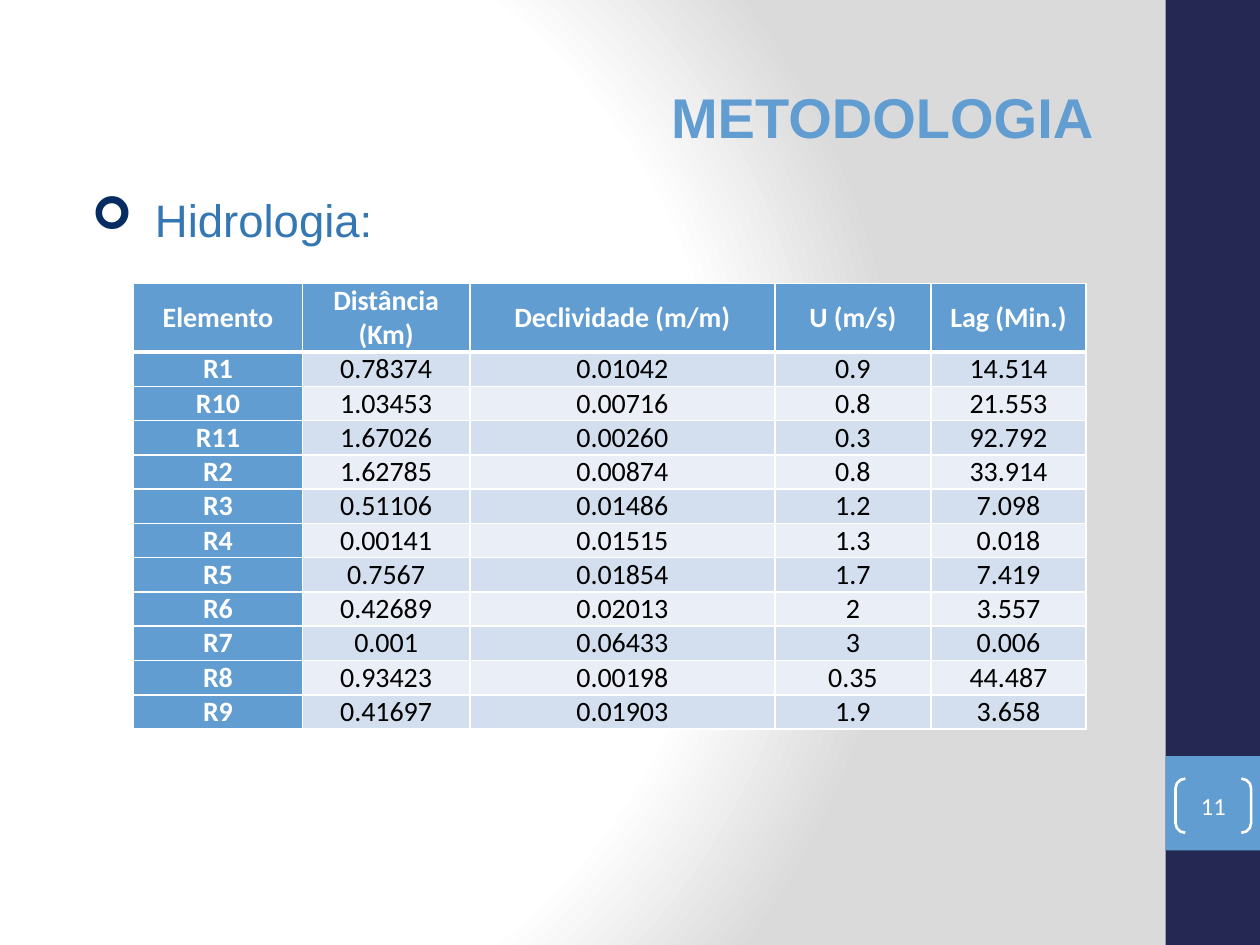
import pptx
import pptx.dml.color
import pptx.enum.shapes
import pptx.enum.text
import pptx.oxml
import pptx.oxml.ns
import pptx.util
from lxml import etree
from pptx.util import Inches

NAVY, BLUE, WHITE = "242852", "629DD1", "FFFFFF"
ALIGN = pptx.enum.text.PP_ALIGN
MIDDLE = pptx.enum.text.MSO_ANCHOR.MIDDLE
SHAPES = pptx.enum.shapes.MSO_SHAPE
qn = pptx.oxml.ns.qn


def color(value):
    return pptx.dml.color.RGBColor.from_string(value)


def style(para, align, size, name, value, bold=False):
    para.alignment = align
    for span in para.runs:
        span.font.size = pptx.util.Pt(size)
        span.font.name = name
        span.font.bold = bold
        span.font.color.rgb = color(value)


deck = pptx.Presentation()
deck.slide_width, deck.slide_height = Inches(10), Inches(7.5)
page = deck.slides.add_slide(deck.slide_layouts[1])

# Background: circular gradient centred towards the left
page.background.fill.gradient()
gradient = page.background._cSld.find(".//" + qn("a:gradFill"))
gradient.getparent().replace(gradient, pptx.oxml.parse_xml(
    '<a:gradFill xmlns:a="http://schemas.openxmlformats.org/drawingml/2006/main" rotWithShape="1">'
    '<a:gsLst><a:gs pos="0"><a:srgbClr val="FFFFFF"/></a:gs>'
    '<a:gs pos="75000"><a:srgbClr val="FFFFFF"/></a:gs>'
    '<a:gs pos="100000"><a:srgbClr val="DADADA"/></a:gs></a:gsLst>'
    '<a:path path="circle"><a:fillToRect l="20000" t="50000" r="100000" b="50000"/></a:path>'
    '</a:gradFill>'))

# Side band and page number square
for top, height, fill in [(0, 7.5, NAVY), (6, 0.75, BLUE)]:
    band = page.shapes.add_shape(SHAPES.RECTANGLE, Inches(9.25), Inches(top), Inches(0.75), Inches(height))
    band.shadow.inherit = False
    band.fill.solid()
    band.fill.fore_color.rgb = color(fill)
    band.line.fill.background()

# Title
title = page.shapes.title
title.left, title.top, title.width, title.height = Inches(0.5), Inches(0.3), Inches(8.28), Inches(1.25)
title.text_frame.text = "METODOLOGIA"
title.text_frame.vertical_anchor = MIDDLE
style(title.text_frame.paragraphs[0], ALIGN.RIGHT, 32, "Arial", BLUE, True)

# Page number in brackets
number = page.shapes.add_shape(SHAPES.DOUBLE_BRACKET, Inches(9.33), Inches(6.18), Inches(0.6), Inches(0.43))
number.adjustments[0] = 0.18
number.shadow.inherit = False
number.fill.background()
number.line.color.rgb = color(WHITE)
number.line.width = pptx.util.Pt(1.5)
frame = number.text_frame
frame.margin_left = frame.margin_right = frame.margin_top = frame.margin_bottom = 0
frame.vertical_anchor = MIDDLE
frame.text = "11"
style(frame.paragraphs[0], ALIGN.CENTER, 14, "Calibri", WHITE)

# Topic with arrow bullet
body = page.placeholders[1]
body.left, body.top, body.width, body.height = Inches(0.51), Inches(1.47), Inches(8.33), Inches(5.38)
body.text_frame.text = "Hidrologia:"
para = body.text_frame.paragraphs[0]
para.space_before = 0
properties = para._p.get_or_add_pPr()
properties.set("marL", str(Inches(0.62)))
properties.set("indent", str(Inches(-0.5)))
bullet_color = etree.SubElement(properties, qn("a:buClr"))
etree.SubElement(bullet_color, qn("a:srgbClr"), val="072C62")
etree.SubElement(properties, qn("a:buFont"), typeface="Wingdings")
etree.SubElement(properties, qn("a:buChar"), char="➢")
style(para, ALIGN.JUSTIFY, 26, "Arial", "3477B2")

# Table of reaches
rows = [
    ("Elemento", "Distância (Km)", "Declividade (m/m)", "U (m/s)", "Lag (Min.)"),
    ("R1", "0.78374", "0.01042", "0.9", "14.514"),
    ("R10", "1.03453", "0.00716", "0.8", "21.553"),
    ("R11", "1.67026", "0.00260", "0.3", "92.792"),
    ("R2", "1.62785", "0.00874", "0.8", "33.914"),
    ("R3", "0.51106", "0.01486", "1.2", "7.098"),
    ("R4", "0.00141", "0.01515", "1.3", "0.018"),
    ("R5", "0.7567", "0.01854", "1.7", "7.419"),
    ("R6", "0.42689", "0.02013", "2", "3.557"),
    ("R7", "0.001", "0.06433", "3", "0.006"),
    ("R8", "0.93423", "0.00198", "0.35", "44.487"),
    ("R9", "0.41697", "0.01903", "1.9", "3.658"),
]
widths = [1.34, 1.33, 2.42, 1.24, 1.23]
table = page.shapes.add_table(len(rows), len(widths), Inches(1.06), Inches(2.25),
                              Inches(7.55), Inches(3.51)).table
table.first_col = True
for column, width in zip(table.columns, widths):
    column.width = Inches(width)

for r, values in enumerate(rows):
    table.rows[r].height = Inches(0.27 if r else 0.54)
    for c, value in enumerate(values):
        cell = table.cell(r, c)
        heading = r == 0 or c == 0
        cell.text_frame.text = value
        cell.vertical_anchor = MIDDLE
        cell.margin_left = cell.margin_right = Inches(0.05)
        cell.margin_top = cell.margin_bottom = 0
        style(cell.text_frame.paragraphs[0], ALIGN.CENTER, 16, "Calibri",
              WHITE if heading else "000000", heading)
        # White rules, thicker under the header row
        for side in "LRTB":
            thick = (r, side) in [(0, "B"), (1, "T")]
            rule = etree.SubElement(cell._tc.get_or_add_tcPr(), qn("a:ln" + side),
                                    w=str(pptx.util.Pt(3 if thick else 1)))
            etree.SubElement(etree.SubElement(rule, qn("a:solidFill")), qn("a:srgbClr"), val=WHITE)
        cell.fill.solid()
        cell.fill.fore_color.rgb = color(BLUE if heading else "D3DFEE" if r % 2 else "EAEFF7")

deck.save("out.pptx")
